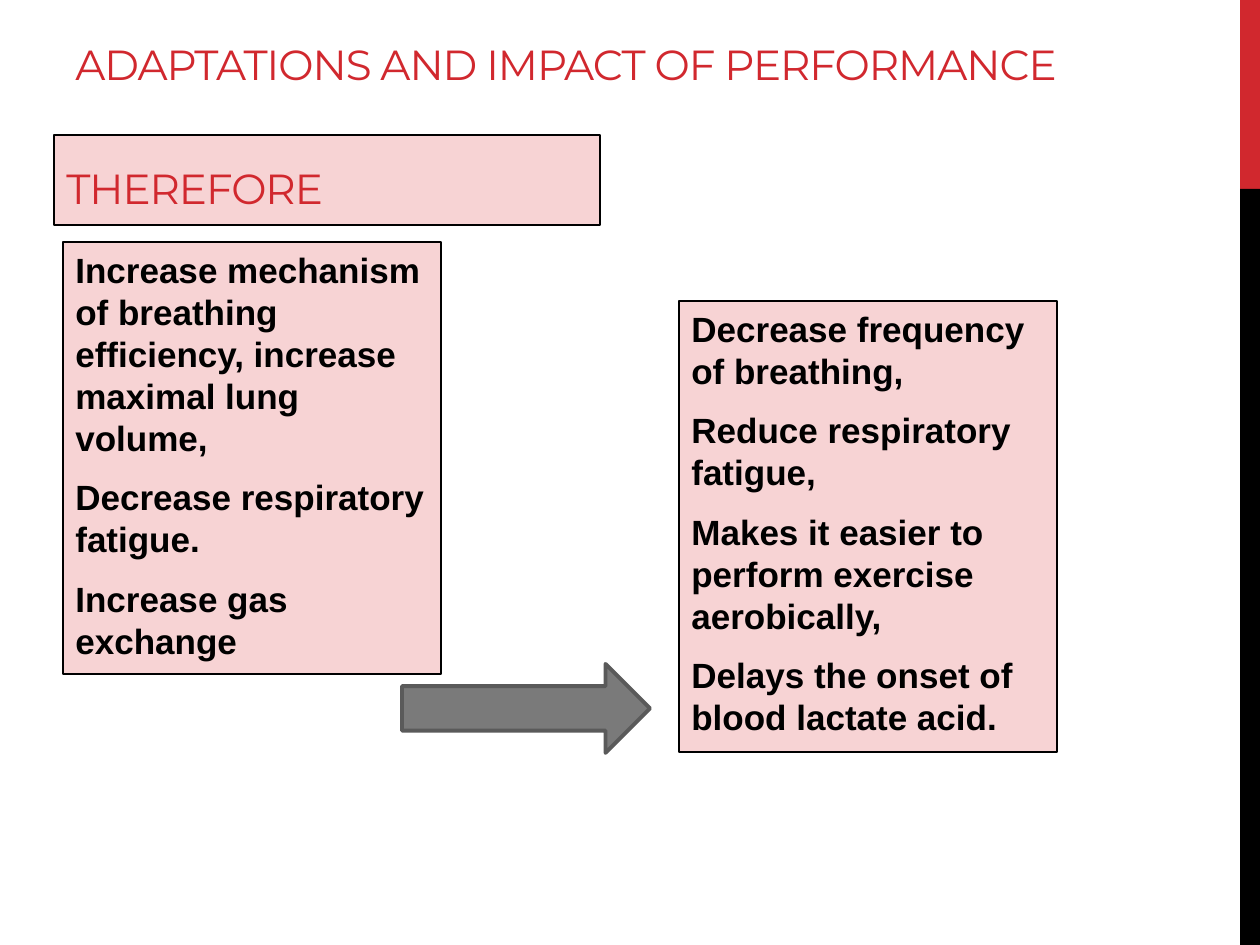
from dataclasses import dataclass

from pptx import Presentation
from pptx.dml.color import RGBColor
from pptx.enum.shapes import MSO_SHAPE
from pptx.enum.text import MSO_ANCHOR, MSO_AUTO_SIZE, PP_ALIGN
from pptx.util import Emu, Pt

RECTANGLE = MSO_SHAPE.RECTANGLE
RIGHT_ARROW = MSO_SHAPE.RIGHT_ARROW
TOP, BOTTOM = MSO_ANCHOR.TOP, MSO_ANCHOR.BOTTOM
LEFT = PP_ALIGN.LEFT
GROW = MSO_AUTO_SIZE.SHAPE_TO_FIT_TEXT

PX_PER_INCH = 126
EMU_PER_PX = 914400 / PX_PER_INCH
SLIDE_WIDTH, SLIDE_HEIGHT = 1260, 945


@dataclass(frozen=True)
class Theme:
    red: str = "D1282E"
    black: str = "000000"
    pink: str = "F7D3D4"
    grey: str = "7A7A7A"
    dark_grey: str = "5A5A5A"
    heading_font: str = "Montserrat"
    body_font: str = "Arial"
    heading_size: int = 24
    heading_end_size: int = 36
    body_size: int = 20
    heading_tracking: int = -60  # hundredths of a point
    thin_line: float = 0.75
    arrow_line: float = 2.25


THEME = Theme()
BODY_PARAGRAPH = {
    "alignment": LEFT,
    "line_spacing": 1.0,
    "space_before": Pt(0.2 * THEME.body_size),
    "space_after": Pt(6),
}

ADAPTATIONS = [
    "Increase mechanism of breathing efficiency, increase maximal lung volume,",
    "Decrease respiratory fatigue.",
    "Increase gas exchange",
]
IMPACTS = [
    "Decrease frequency of breathing,",
    "Reduce respiratory fatigue,",
    "Makes it easier to perform exercise aerobically,",
    "Delays the onset of blood lactate acid.",
]


def px(*lengths):
    return [Emu(round(length * EMU_PER_PX)) for length in lengths]


def apply_format(target, values):
    for name, value in values.items():
        setattr(target, name, value)


def add_block(slide, box, fill, line=None, line_width=0, kind=RECTANGLE):
    block = slide.shapes.add_shape(kind, *px(*box))
    block.shadow.inherit = False
    block.fill.solid()
    block.fill.fore_color.rgb = RGBColor.from_string(fill)
    if line:
        block.line.color.rgb = RGBColor.from_string(line)
        block.line.width = Pt(line_width)
    else:
        block.line.fill.background()
    return block


def add_panel(slide, box):
    """Add a pink outlined box that grows with its text."""
    panel = add_block(slide, box, THEME.pink, THEME.black, THEME.thin_line)
    apply_format(panel.text_frame, {
        "word_wrap": True, "vertical_anchor": TOP, "auto_size": GROW})
    return panel


def add_run(paragraph, text, font, size, color, bold=False):
    run = paragraph.add_run()
    run.text = text
    apply_format(run.font, {"name": font, "size": Pt(size), "bold": bold})
    run.font.color.rgb = RGBColor.from_string(color)
    return run


def add_heading_run(paragraph, text, size=THEME.heading_size):
    run = add_run(paragraph, text, THEME.heading_font, size, THEME.red)
    run.font._element.set("spc", str(THEME.heading_tracking))


def add_title(slide, box, text):
    frame = slide.shapes.add_textbox(*px(*box)).text_frame
    apply_format(frame, {"word_wrap": True, "vertical_anchor": BOTTOM})
    add_heading_run(frame.paragraphs[0], text)


def add_heading_panel(slide, box, text):
    """Add a one-line panel whose larger closing space sets the line height."""
    paragraph = add_panel(slide, box).text_frame.paragraphs[0]
    paragraph.alignment = LEFT
    add_heading_run(paragraph, text)
    add_heading_run(paragraph, " ", THEME.heading_end_size)


def add_points_panel(slide, box, points):
    frame = add_panel(slide, box).text_frame
    for index, point in enumerate(points):
        paragraph = frame.add_paragraph() if index else frame.paragraphs[0]
        apply_format(paragraph, BODY_PARAGRAPH)
        add_run(paragraph, point, THEME.body_font, THEME.body_size,
                THEME.black, bold=True)


def add_side_band(slide):
    left, split = 1240, 189
    width = SLIDE_WIDTH - left
    add_block(slide, (left, 0, width, split), THEME.red)
    add_block(slide, (left, split, width, SLIDE_HEIGHT - split), THEME.black)


def main():
    deck = Presentation()
    deck.slide_width, deck.slide_height = px(SLIDE_WIDTH, SLIDE_HEIGHT)
    slide = deck.slides.add_slide(deck.slide_layouts[6])

    add_side_band(slide)
    add_title(slide, (63, 21, 1123, 74), "ADAPTATIONS AND IMPACT OF PERFORMANCE")
    add_points_panel(slide, (63, 242, 378, 432), ADAPTATIONS)
    add_heading_panel(slide, (54, 135, 546, 90), "THEREFORE")
    add_block(slide, (402, 664, 248, 89), THEME.grey, THEME.dark_grey,
              THEME.arrow_line, RIGHT_ARROW)
    add_points_panel(slide, (679, 301, 378, 451), IMPACTS)

    deck.save("out.pptx")


if __name__ == "__main__":
    main()
